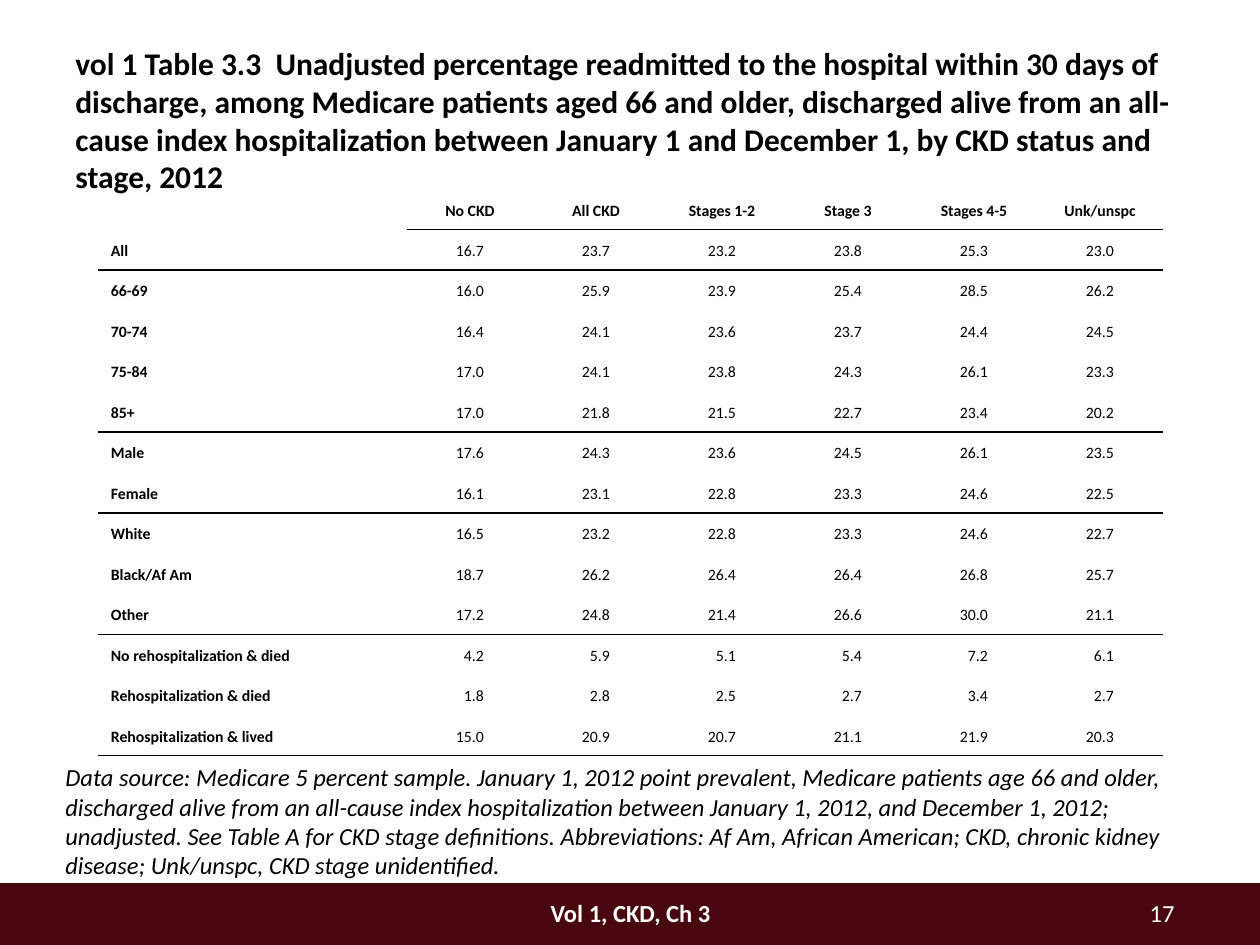
from lxml.etree import SubElement
from pptx import Presentation
from pptx.dml.color import RGBColor
from pptx.enum.shapes import MSO_SHAPE as Shape
from pptx.enum.text import MSO_ANCHOR as Anchor, PP_ALIGN as Align
from pptx.oxml.ns import qn
from pptx.util import Inches, Pt

BLACK, WHITE, MAROON = "000000", "FFFFFF", "48070E"

TITLE = (
    "vol 1 Table 3.3  Unadjusted percentage readmitted to the hospital within 30 days of "
    "discharge, among Medicare patients aged 66 and older, discharged alive from an all-cause "
    "index hospitalization between January 1 and December 1, by CKD status and stage, 2012"
)
SOURCE_NOTE = (
    "Data source: Medicare 5 percent sample. January 1, 2012 point prevalent, Medicare patients "
    "age 66 and older, discharged alive from an all-cause index hospitalization between "
    "January 1, 2012, and December 1, 2012; unadjusted. See Table A for CKD stage definitions. "
    "Abbreviations: Af Am, African American; CKD, chronic kidney disease; Unk/unspc, CKD stage "
    "unidentified."
)
# text, (left, top, width, height), alignment, font
TEXTS = [
    ("Vol 1, CKD, Ch 3", (3.92, 7.08, 2.17, 0.33), Align.CENTER,
     {"size": 14, "color": WHITE, "bold": True}),
    ("17", (8.42, 7.08, 1, 0.3), Align.RIGHT, {"size": 14, "color": WHITE}),
    (TITLE, (0.5, 0.3, 9, 0.6), Align.LEFT, {"size": 18, "bold": True}),
    (SOURCE_NOTE, (0.42, 6, 9.08, 0.58), Align.LEFT, {"size": 14, "italic": True}),
]

HEADERS = ["", "No CKD", "All CKD", "Stages 1-2", "Stage 3", "Stages 4-5", "Unk/unspc"]
# Each group of rows ends with a rule.
GROUPS = [
    [("All", 16.7, 23.7, 23.2, 23.8, 25.3, 23.0)],
    [("66-69", 16.0, 25.9, 23.9, 25.4, 28.5, 26.2),
     ("70-74", 16.4, 24.1, 23.6, 23.7, 24.4, 24.5),
     ("75-84", 17.0, 24.1, 23.8, 24.3, 26.1, 23.3),
     ("85+", 17.0, 21.8, 21.5, 22.7, 23.4, 20.2)],
    [("Male", 17.6, 24.3, 23.6, 24.5, 26.1, 23.5),
     ("Female", 16.1, 23.1, 22.8, 23.3, 24.6, 22.5)],
    [("White", 16.5, 23.2, 22.8, 23.3, 24.6, 22.7),
     ("Black/Af Am", 18.7, 26.2, 26.4, 26.4, 26.8, 25.7),
     ("Other", 17.2, 24.8, 21.4, 26.6, 30.0, 21.1)],
    [("No rehospitalization & died", 4.2, 5.9, 5.1, 5.4, 7.2, 6.1),
     ("Rehospitalization & died", 1.8, 2.8, 2.5, 2.7, 3.4, 2.7),
     ("Rehospitalization & lived", 15.0, 20.9, 20.7, 21.1, 21.9, 20.3)],
]
TABLE_AREA = (0.78, 1.5, 8.45, 4.5)
LABEL_WIDTH, VALUE_WIDTH = 2.45, 1


def rgb(color):
    return RGBColor.from_string(color)


def write(frame, text, align, size, color=BLACK, **styles):
    """Put one formatted paragraph in a text frame and return it."""
    para = frame.paragraphs[0]
    para.alignment = align
    span = para.add_run()
    span.text = text
    span.font.color.rgb = rgb(color)
    for name, value in {"name": "Calibri", "size": Pt(size), **styles}.items():
        setattr(span.font, name, value)
    return para


def set_borders(cell, ruled):
    """Draw 1 pt lines on the ruled sides (T, B) and clear the other sides."""
    properties = cell._tc.get_or_add_tcPr()
    for side in "LRTB":
        line = SubElement(properties, qn(f"a:ln{side}"), w=str(Pt(1)))
        if side in ruled:
            fill = SubElement(line, qn("a:solidFill"))
            SubElement(fill, qn("a:srgbClr"), val=BLACK)
        else:
            SubElement(line, qn("a:noFill"))


def add_table(page):
    rows, rule_rows = [HEADERS], {0}
    for group in GROUPS:
        rows.extend(group)
        rule_rows.add(len(rows) - 1)

    area = [Inches(value) for value in TABLE_AREA]
    table = page.shapes.add_table(len(rows), len(HEADERS), *area).table
    table.first_row = table.horz_banding = False
    for index, column in enumerate(table.columns):
        column.width = Inches(VALUE_WIDTH if index else LABEL_WIDTH)

    for r, row in enumerate(rows):
        table.rows[r].height = Inches(TABLE_AREA[3] / len(rows))
        for c, value in enumerate(row):
            cell = table.cell(r, c)
            is_value = r > 0 and c > 0
            margins = {"left": 0.1, "right": 0.39 if is_value else 0.1, "top": 0, "bottom": 0}
            for side, margin in margins.items():
                setattr(cell, f"margin_{side}", Inches(margin))
            cell.vertical_anchor = Anchor.MIDDLE
            # The header rule skips the empty corner cell.
            lines = {"T": r - 1, "B": r}
            set_borders(cell, [side for side, line in lines.items()
                               if line in rule_rows and (line > 0 or c > 0)])
            cell.fill.background()
            align = Align.RIGHT if is_value else Align.CENTER if c else Align.LEFT
            text = f"{value:.1f}" if is_value else value
            if text:
                para = write(cell.text_frame, text, align, 9, bold=not is_value)
                para.line_spacing = 1.15


def main():
    deck = Presentation()
    deck.slide_width, deck.slide_height = Inches(10), Inches(7.5)
    page = deck.slides.add_slide(deck.slide_layouts[6])

    footer = page.shapes.add_shape(Shape.RECTANGLE, 0, Inches(7.01), Inches(10), Inches(0.49))
    footer.shadow.inherit = False
    footer.fill.solid()
    footer.fill.fore_color.rgb = rgb(MAROON)
    footer.line.fill.background()

    for text, area, align, font in TEXTS:
        box = page.shapes.add_textbox(*(Inches(value) for value in area))
        box.text_frame.word_wrap = True
        write(box.text_frame, text, align, **font)

    add_table(page)
    deck.save("out.pptx")


if __name__ == "__main__":
    main()
